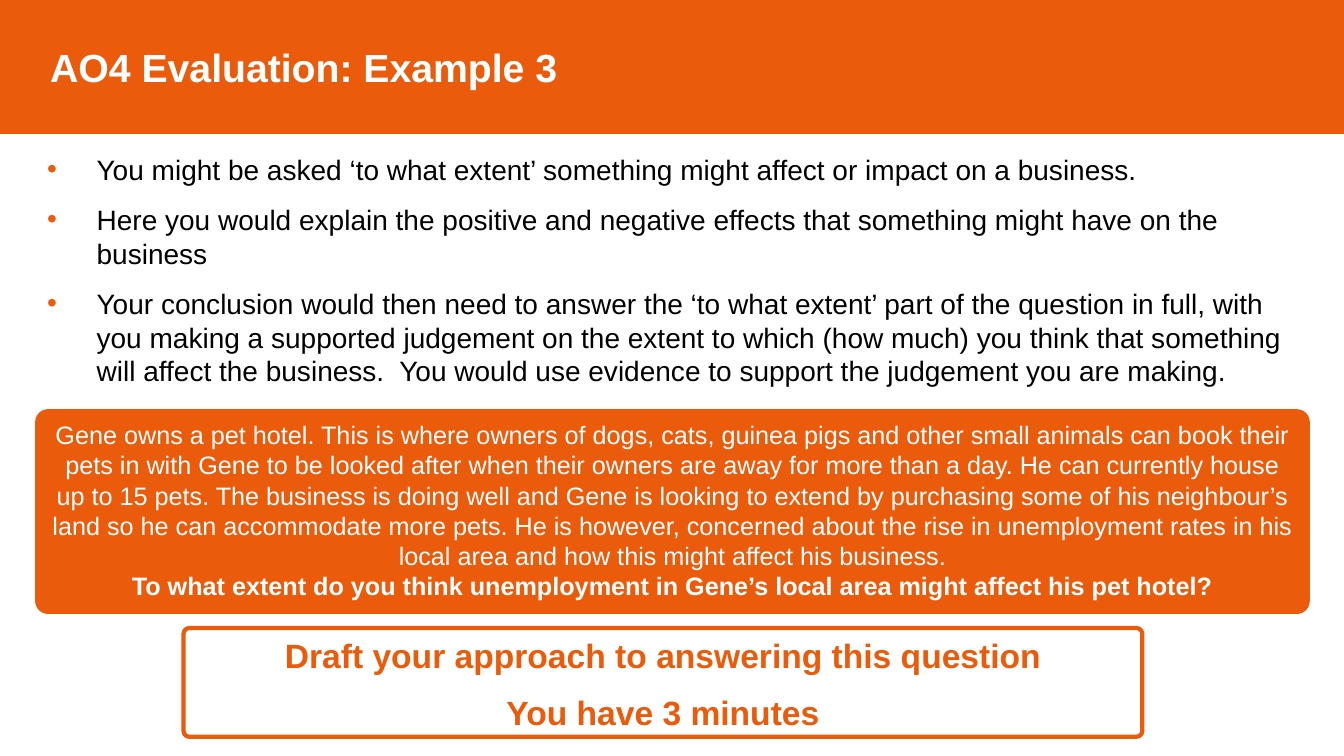
from pptx import Presentation
from pptx.dml.color import RGBColor
from pptx.enum.shapes import MSO_SHAPE
from pptx.enum.text import MSO_ANCHOR, PP_ALIGN
from pptx.oxml.ns import qn
from pptx.util import Pt
from lxml import etree

RECTANGLE, ROUNDED = MSO_SHAPE.RECTANGLE, MSO_SHAPE.ROUNDED_RECTANGLE
TOP, MIDDLE = MSO_ANCHOR.TOP, MSO_ANCHOR.MIDDLE
LEFT, CENTER = PP_ALIGN.LEFT, PP_ALIGN.CENTER

TITLE = "AO4 Evaluation: Example 3"
POINTS = [
    "You might be asked ‘to what extent’ something might affect or impact on a business.",
    "Here you would explain the positive and negative effects that something might have "
    "on the business",
    "Your conclusion would then need to answer the ‘to what extent’ part of the question "
    "in full, with you making a supported judgement on the extent to which (how much) you "
    "think that something will affect the business.  You would use evidence to support the "
    "judgement you are making.",
]
CASE_STUDY = (
    "Gene owns a pet hotel. This is where owners of dogs, cats, guinea pigs and other small "
    "animals can book their pets in with Gene to be looked after when their owners are away "
    "for more than a day. He can currently house up to 15 pets. The business is doing well "
    "and Gene is looking to extend by purchasing some of his neighbour’s land so he can "
    "accommodate more pets. He is however, concerned about the rise in unemployment rates in "
    "his local area and how this might affect his business."
)
QUESTION = (
    "To what extent do you think unemployment in Gene’s local area might affect his pet hotel?"
)
TASK = ["Draft your approach to answering this question", "You have 3 minutes"]

COLORS = {"orange": "EA5B0C", "white": "FFFFFF", "black": "000000"}
FONT = "Arial"
PX = 9144
SLIDE_WIDTH, SLIDE_HEIGHT = 1333, 750
MARGIN = 37
CONTENT_WIDTH = 1260
CORNER = 0.054


def color(name):
    return RGBColor.from_string(COLORS[name])


def add_panel(slide, kind, left, top, width, height, fill=None, line_width=3, anchor=TOP):
    shape = slide.shapes.add_shape(kind, left * PX, top * PX, width * PX, height * PX)
    shape.shadow.inherit = False
    if kind == ROUNDED:
        shape.adjustments[0] = CORNER
    if fill:
        shape.fill.solid()
        shape.fill.fore_color.rgb = color(fill)
    else:
        shape.fill.background()
    shape.line.color.rgb = color("orange")
    shape.line.width = Pt(line_width)
    shape.text_frame.word_wrap = True
    shape.text_frame.vertical_anchor = anchor
    return shape.text_frame


def add_text(frame, text, size=18, ink="white", bold=False, align=CENTER,
             after=0, margin=0, bullet=None):
    first = frame.paragraphs[0]
    paragraph = first if not first.runs else frame.add_paragraph()
    paragraph.alignment = align
    paragraph.space_after = Pt(after)
    run = paragraph.add_run()
    run.text = text
    run.font.name = FONT
    run.font.size = Pt(size)
    run.font.bold = bold
    run.font.color.rgb = color(ink)
    properties = paragraph._p.get_or_add_pPr()
    properties.set("marL", str(margin * PX))
    properties.set("indent", str(-margin * PX if bullet else 0))
    if bullet:
        bullet_color = etree.SubElement(properties, qn("a:buClr"))
        etree.SubElement(bullet_color, qn("a:srgbClr"), val=COLORS["orange"])
        etree.SubElement(properties, qn("a:buFont"), typeface=FONT)
        etree.SubElement(properties, qn("a:buChar"), char=bullet)


def main():
    presentation = Presentation()
    presentation.slide_width = SLIDE_WIDTH * PX
    presentation.slide_height = SLIDE_HEIGHT * PX
    slide = presentation.slides.add_slide(presentation.slide_layouts[6])

    banner = add_panel(slide, RECTANGLE, 0, 0, SLIDE_WIDTH, 132, "orange", 1, MIDDLE)
    add_text(banner, TITLE, size=28, bold=True, align=LEFT, margin=40)

    points = slide.shapes.add_textbox(
        MARGIN * PX, 146 * PX, CONTENT_WIDTH * PX, 246 * PX).text_frame
    points.word_wrap = True
    for point in POINTS:
        add_text(points, point, size=20, ink="black", align=LEFT,
                 after=12, margin=49, bullet="•")

    case = add_panel(slide, ROUNDED, MARGIN, 408, CONTENT_WIDTH, 199, "orange")
    add_text(case, CASE_STUDY)
    add_text(case, QUESTION, bold=True)

    task = add_panel(slide, ROUNDED, 182, 623, 951, 108)
    for line in TASK:
        add_text(task, line, size=24, ink="orange", bold=True, after=12)

    presentation.save("out.pptx")


if __name__ == "__main__":
    main()
